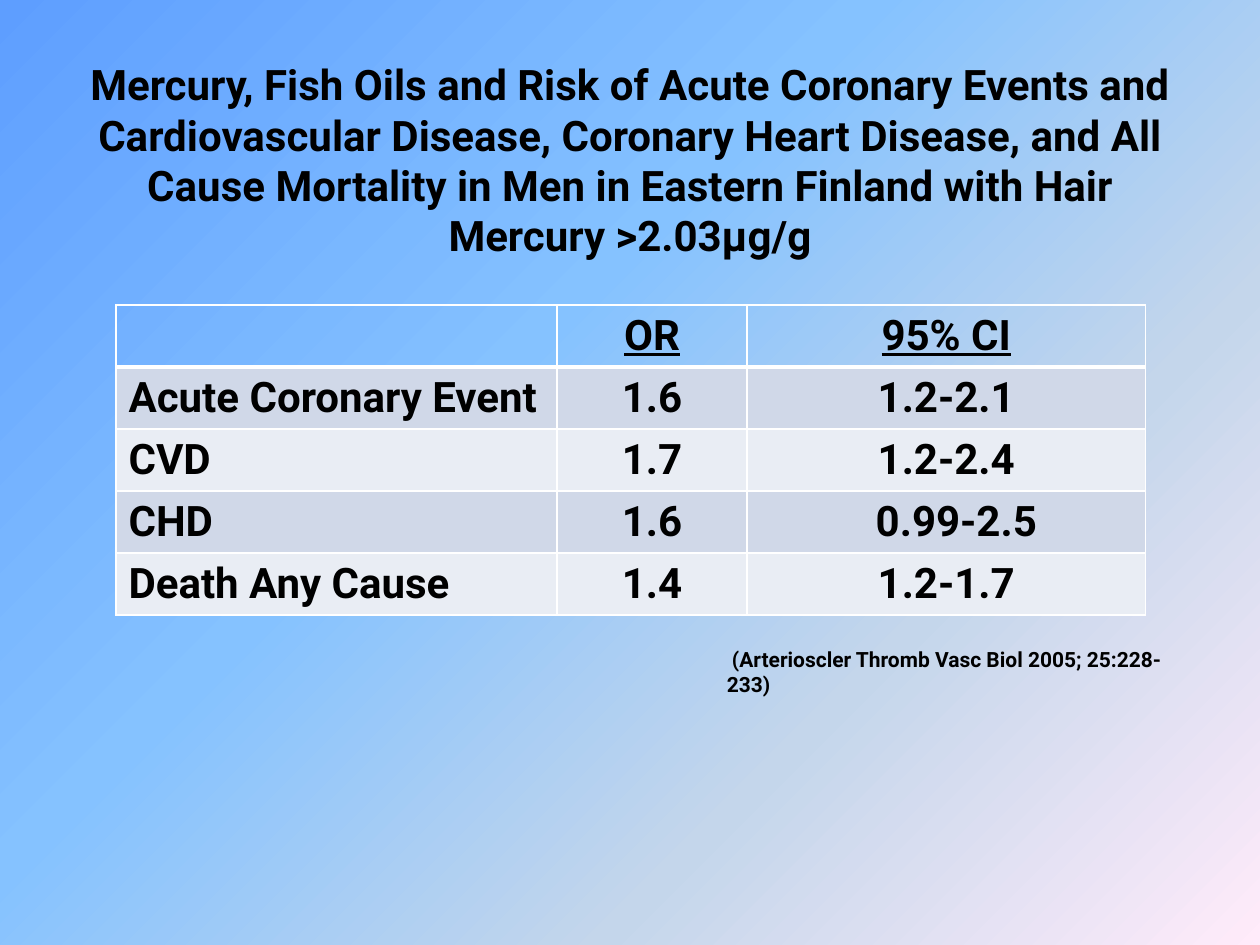
from copy import deepcopy
from dataclasses import dataclass

from lxml import etree
from pptx import Presentation
from pptx.dml.color import RGBColor
from pptx.enum.text import MSO_ANCHOR, MSO_AUTO_SIZE, PP_ALIGN
from pptx.oxml.ns import qn
from pptx.util import Inches, Pt

LEFT, CENTER = PP_ALIGN.LEFT, PP_ALIGN.CENTER
MIDDLE, TOP = MSO_ANCHOR.MIDDLE, MSO_ANCHOR.TOP
NO_FIT = MSO_AUTO_SIZE.NONE


@dataclass(frozen=True)
class Theme:
    """Colours, font and type sizes of the slide."""
    font: str = "Roboto"
    ink: str = "000000"
    rule: str = "FFFFFF"
    bands: tuple = ("D0D8E8", "E9EDF4")
    sky: tuple = ((0, "5E9EFF"), (0.4, "85C2FF"), (0.7, "C4D6EB"), (1, "FFEBFA"))
    large: int = 24
    small: int = 12
    thin: int = 1
    thick: int = 3


THEME = Theme()
TITLE = (
    "Mercury, Fish Oils and Risk of Acute Coronary Events and "
    "Cardiovascular Disease, Coronary Heart Disease, and All Cause Mortality "
    "in Men in Eastern Finland with Hair Mercury >2.03µg/g"
)
SOURCE = " (Arterioscler Thromb Vasc Biol 2005; 25:228-233)"
ROWS = (
    ("", "OR", "95% CI"),
    ("Acute Coronary Event", "1.6", "1.2-2.1"),
    ("CVD", "1.7", "1.2-2.4"),
    ("CHD", "1.6", "0.99-2.5"),
    ("Death Any Cause", "1.4", "1.2-1.7"),
)
WIDTHS = (3.5, 1.51, 3.16)
ROW_HEIGHT = 0.49


def paint_back(slide):
    """Fill the background with the diagonal gradient."""
    fill = slide.background.fill
    fill.gradient()
    fill.gradient_angle = 315
    stops = slide.element.find(".//" + qn("a:gsLst"))
    while len(stops) < len(THEME.sky):
        stops.append(deepcopy(stops[0]))
    for stop, (place, color) in zip(fill.gradient_stops, THEME.sky):
        stop.position = place
        stop.color.rgb = RGBColor.from_string(color)


def set_text(frame, text, size, align=LEFT, under=False):
    """Write one bold paragraph in a text frame."""
    frame.text = text
    para = frame.paragraphs[0]
    para.alignment = align
    font = para.font
    font.name, font.size, font.bold = THEME.font, Pt(size), True
    font.underline = under
    font.color.rgb = RGBColor.from_string(THEME.ink)


def add_title(slide):
    """Place and format the title."""
    title = slide.shapes.title
    title.left, title.top = Inches(0.5), Inches(0.5)
    title.width, title.height = Inches(9), Inches(1.92)
    frame = title.text_frame
    set_text(frame, TITLE, THEME.large, CENTER)
    frame.auto_size = NO_FIT
    frame.vertical_anchor = MIDDLE
    frame.margin_bottom = Inches(0.44)


def set_edges(cell, above, below):
    """Draw the four borders of a cell."""
    props = cell._tc.get_or_add_tcPr()
    sides = {"L": THEME.thin, "R": THEME.thin, "T": above, "B": below}
    for side, width in sides.items():
        line = etree.SubElement(props, qn(f"a:ln{side}"), w=str(Pt(width)))
        fill = etree.SubElement(line, qn("a:solidFill"))
        etree.SubElement(fill, qn("a:srgbClr"), val=THEME.rule)


def set_cell(cell, text, row, col):
    """Fill in and format one table cell."""
    head = row == 0
    set_text(cell.text_frame, text, THEME.large, CENTER if col else LEFT, head)
    cell.vertical_anchor = TOP
    if text.startswith("0.99"):
        cell.margin_left = Inches(0.26)
    set_edges(
        cell,
        THEME.thick if row == 1 else THEME.thin,
        THEME.thick if head else THEME.thin,
    )
    if head:
        cell.fill.background()
    else:
        cell.fill.solid()
        band = THEME.bands[(row - 1) % len(THEME.bands)]
        cell.fill.fore_color.rgb = RGBColor.from_string(band)


def add_risks(slide):
    """Add the table of odds ratios."""
    table = slide.shapes.add_table(
        len(ROWS), len(WIDTHS), Inches(0.92), Inches(2.42),
        Inches(sum(WIDTHS)), Inches(ROW_HEIGHT * len(ROWS)),
    ).table
    for column, width in zip(table.columns, WIDTHS):
        column.width = Inches(width)
    for row, texts in enumerate(ROWS):
        table.rows[row].height = Inches(ROW_HEIGHT)
        for col, text in enumerate(texts):
            set_cell(table.cell(row, col), text, row, col)


def add_source(slide):
    """Add the citation below the table."""
    box = slide.shapes.add_textbox(
        Inches(5.67), Inches(5.08), Inches(3.83), Inches(0.51)
    )
    box.text_frame.word_wrap = True
    set_text(box.text_frame, SOURCE, THEME.small)


def main():
    """Build and save the slide."""
    deck = Presentation()
    deck.slide_width, deck.slide_height = Inches(10), Inches(7.5)
    slide = deck.slides.add_slide(deck.slide_layouts[5])
    paint_back(slide)
    add_title(slide)
    add_risks(slide)
    add_source(slide)
    deck.save("out.pptx")


if __name__ == "__main__":
    main()
